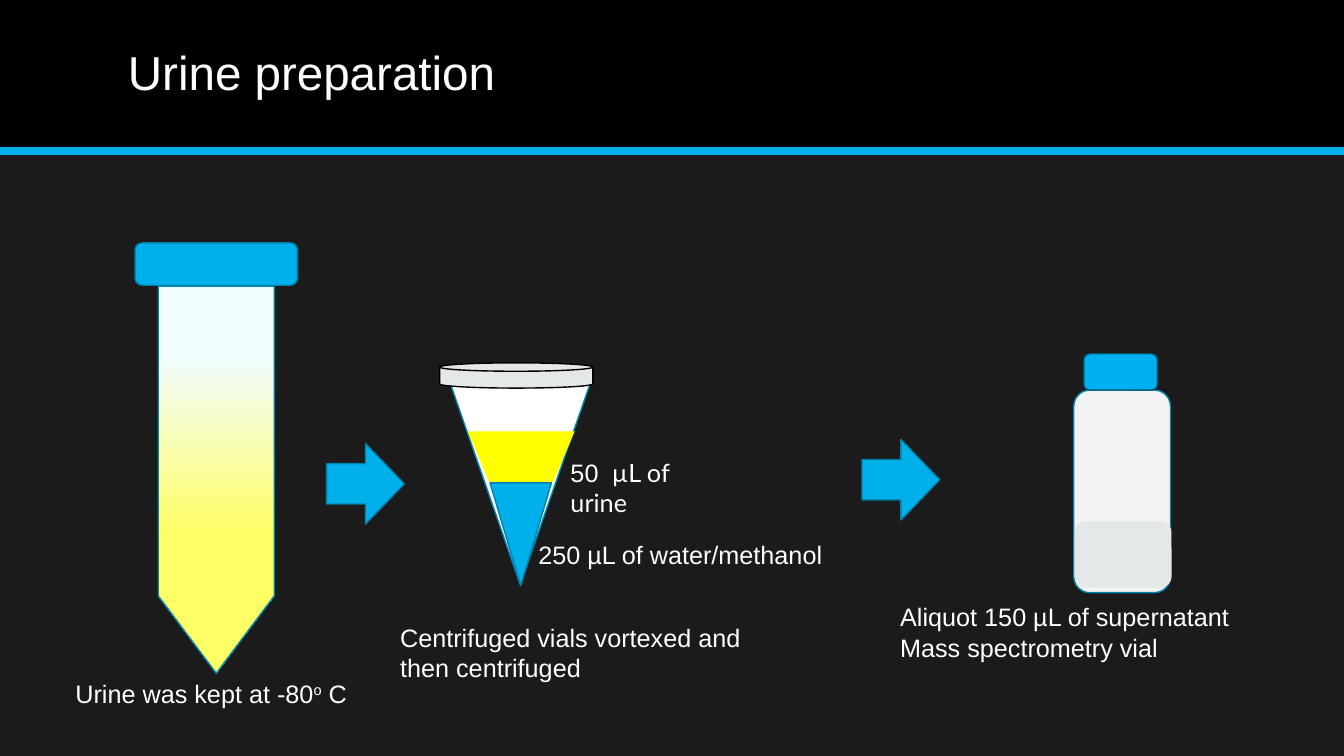
from dataclasses import dataclass
from typing import Optional

from lxml.etree import SubElement
from pptx import Presentation
from pptx.dml.color import RGBColor
from pptx.enum.shapes import MSO_CONNECTOR, MSO_SHAPE
from pptx.enum.text import MSO_ANCHOR, MSO_AUTO_SIZE
from pptx.oxml.ns import qn
from pptx.util import Inches, Pt


@dataclass(frozen=True)
class Theme:
    background: str = "1B1B1B"
    band: str = "000000"
    blue: str = "00B0EA"
    cap_blue: str = "00B0F0"
    outline: str = "0082AD"
    cap_outline: str = "005875"
    white: str = "FFFFFF"
    glass: str = "F2F2F2"
    grey: str = "E5E8E8"
    urine: str = "FFFF00"
    tube_top: str = "F1FCFF"
    tube_bottom: str = "FFFF66"
    font: str = "Arial"
    accent_font: str = "Lato"
    title_size: int = 34
    label_size: int = 18


THEME = Theme()


@dataclass(frozen=True)
class Part:
    kind: MSO_SHAPE
    box: tuple[float, float, float, float]
    fill: str
    line: Optional[str] = THEME.outline
    fade_to: Optional[str] = None


@dataclass(frozen=True)
class Piece:
    text: str
    font: str = THEME.font
    baseline: int = 0


@dataclass(frozen=True)
class Label:
    box: tuple[float, float, float, float]
    paragraphs: list[list[Piece]]
    size: int = THEME.label_size
    is_title: bool = False


# Stacked back to front
TITLE_BAND = Part(MSO_SHAPE.RECTANGLE, (0, 0, 13.33, 1.5), THEME.band, None)
URINE_TUBE = [
    Part(MSO_SHAPE.FLOWCHART_OFFPAGE_CONNECTOR, (1.57, 2.84, 1.15, 3.84),
         THEME.tube_top, fade_to=THEME.tube_bottom),
    Part(MSO_SHAPE.ROUNDED_RECTANGLE, (1.34, 2.41, 1.61, 0.42), THEME.blue),
]
STEP_ARROWS = [
    Part(MSO_SHAPE.RIGHT_ARROW, (left, top, 0.77, 0.8), THEME.blue)
    for left, top in ((3.24, 4.4), (8.55, 4.36))
]
SPECTROMETRY_VIAL = [
    Part(MSO_SHAPE.ROUNDED_RECTANGLE, (10.65, 3.87, 0.96, 2.01), THEME.glass),
    Part(MSO_SHAPE.ROUNDED_RECTANGLE, (10.75, 3.51, 0.73, 0.36),
         THEME.cap_blue, THEME.cap_outline),
    Part(MSO_SHAPE.ROUNDED_RECTANGLE, (10.66, 5.17, 0.96, 0.66), THEME.grey, None),
]
CENTRIFUGE_VIAL = [
    Part(MSO_SHAPE.FLOWCHART_MERGE, (4.44, 3.73, 1.44, 2.07), THEME.white),
    Part(MSO_SHAPE.FLOWCHART_MERGE, (4.86, 4.79, 0.61, 1.02), THEME.blue),
    Part(MSO_SHAPE.FLOWCHART_MANUAL_OPERATION, (4.64, 4.28, 1.06, 0.5), THEME.urine, None),
    Part(MSO_SHAPE.FLOWCHART_MAGNETIC_DISK, (4.36, 3.6, 1.52, 0.25), THEME.grey, THEME.band),
]
LABELS = [
    Label((1.17, 0.14, 11, 1.2), [[Piece("Urine preparation")]], THEME.title_size, True),
    Label((8.83, 5.92, 3.49, 0.71),
          [[Piece("Aliquot 150 µL of supernatant")], [Piece("Mass spectrometry vial")]]),
    Label((5.56, 4.49, 1.78, 0.4), [[Piece("50 "), Piece(" µL of urine", THEME.accent_font)]]),
    Label((5.24, 5.3, 3.11, 0.4), [[Piece("250 µL of water/methanol")]]),
    Label((0.65, 6.68, 3, 0.71),
          [[Piece("Urine was kept at -80"), Piece("o", baseline=30), Piece(" C")]]),
    Label((3.87, 6.12, 3.68, 0.71),
          [[Piece("Centrifuged vials vortexed and")], [Piece("then centrifuged")]]),
]


def rgb(value: str) -> RGBColor:
    return RGBColor.from_string(value)


def draw_part(slide, part: Part) -> None:
    shape = slide.shapes.add_shape(part.kind, *map(Inches, part.box))
    shape.shadow.inherit = False
    if part.fade_to:
        shape.fill.gradient()
        shape.fill.gradient_angle = 270
        stops = ((0.18, part.fill), (0.64, part.fade_to))
        for stop, (position, color) in zip(shape.fill.gradient_stops, stops):
            stop.position = position
            stop.color.rgb = rgb(color)
    else:
        shape.fill.solid()
        shape.fill.fore_color.rgb = rgb(part.fill)
    if part.line:
        shape.line.color.rgb = rgb(part.line)
        shape.line.width = Pt(1)
    else:
        shape.line.fill.background()


def draw_label(slide, label: Label) -> None:
    frame = slide.shapes.add_textbox(*map(Inches, label.box)).text_frame
    frame.word_wrap = True
    if label.is_title:
        frame.vertical_anchor = MSO_ANCHOR.MIDDLE
    else:
        frame.auto_size = MSO_AUTO_SIZE.SHAPE_TO_FIT_TEXT
    for index, pieces in enumerate(label.paragraphs):
        paragraph = frame.add_paragraph() if index else frame.paragraphs[0]
        if label.is_title:
            paragraph.line_spacing = 0.9
        for piece in pieces:
            run = paragraph.add_run()
            run.text = piece.text
            run.font.name = piece.font
            run.font.size = Pt(label.size)
            run.font.color.rgb = rgb(THEME.white)
            if piece.baseline:
                run.font._element.set("baseline", str(piece.baseline * 1000))


def draw_title_rule(slide) -> None:
    rule = slide.shapes.add_connector(
        MSO_CONNECTOR.STRAIGHT, *map(Inches, (0, 1.5, 13.33, 1.5)))
    rule.line.color.rgb = rgb(THEME.blue)
    rule.line.width = Pt(6)
    SubElement(rule._element.spPr, qn("a:effectLst"))


def main() -> None:
    deck = Presentation()
    deck.slide_width, deck.slide_height = Inches(13.33), Inches(7.5)
    slide = deck.slides.add_slide(deck.slide_layouts[6])
    slide.background.fill.solid()
    slide.background.fill.fore_color.rgb = rgb(THEME.background)

    # Title band
    draw_part(slide, TITLE_BAND)
    draw_title_rule(slide)

    # Vessels and the arrows between them
    for part in URINE_TUBE + STEP_ARROWS + SPECTROMETRY_VIAL + CENTRIFUGE_VIAL:
        draw_part(slide, part)

    # Title and captions
    for label in LABELS:
        draw_label(slide, label)

    deck.save("out.pptx")


if __name__ == "__main__":
    main()
